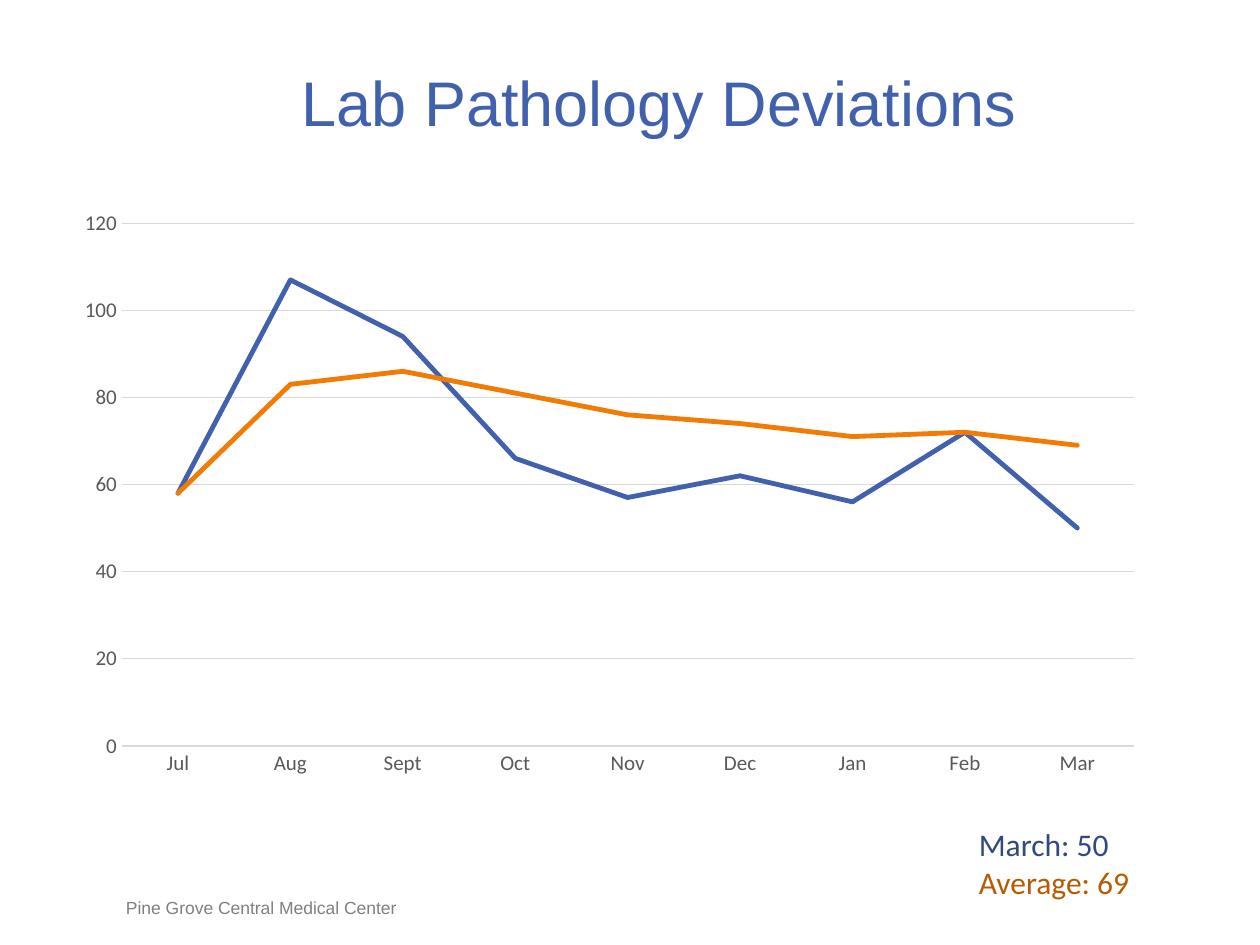
from pptx import Presentation
from pptx.chart.data import CategoryChartData
from pptx.dml.color import RGBColor
from pptx.enum.chart import XL_CHART_TYPE, XL_MARKER_STYLE, XL_TICK_MARK
from pptx.enum.text import MSO_ANCHOR, PP_ALIGN
from pptx.util import Inches, Pt

LINE_CHART = XL_CHART_TYPE.LINE
NO_MARKER = XL_MARKER_STYLE.NONE
NO_TICK = XL_TICK_MARK.NONE
TOP, BOTTOM = MSO_ANCHOR.TOP, MSO_ANCHOR.BOTTOM
LEFT, CENTER = PP_ALIGN.LEFT, PP_ALIGN.CENTER

THEME = {
    "heading_font": "Arial", "body_font": "Calibri",
    "title_size": 36, "summary_size": 18, "axis_size": 12,
    "chart_size": 10, "footer_size": 10,
    "blue": "4261AD", "orange": "F07B05",
    "dark_blue": "314982", "dark_orange": "B45C04",
    "footer": "808080", "axis_text": "595959", "grid": "D9D9D9",
    "chart_text": "000000",
    "series_width": 2.75, "axis_width": 1, "grid_width": 0.75,
}

TITLE = "Lab Pathology Deviations"
FOOTER = "Pine Grove Central Medical Center"
MONTHS = ["Jul", "Aug", "Sept", "Oct", "Nov", "Dec", "Jan", "Feb", "Mar"]
SERIES = [
    ("Series 1", [58, 107, 94, 66, 57, 62, 56, 72, 50], "blue"),
    ("Series 2", [58, 83, 86, 81, 76, 74, 71, 72, 69], "orange"),
]
SUMMARY = [("March: 50", "dark_blue"), ("Average: 69", "dark_orange")]


def style_font(font, family, size, color):
    font.name = THEME[family]
    font.size = Pt(THEME[size])
    font.color.rgb = RGBColor.from_string(THEME[color])


def style_line(line, color, width):
    line.color.rgb = RGBColor.from_string(THEME[color])
    line.width = Pt(THEME[width])


def add_text(page, area, lines, family, size, align=LEFT, anchor=TOP, inset=True):
    """Add a box with one paragraph per (text, colour) pair."""
    box = page.shapes.add_textbox(*map(Inches, area))
    frame = box.text_frame
    frame.word_wrap = True
    frame.vertical_anchor = anchor
    if not inset:
        frame.margin_left = frame.margin_right = 0
        frame.margin_top = frame.margin_bottom = 0
    for index, (text, color) in enumerate(lines):
        para = frame.add_paragraph() if index else frame.paragraphs[0]
        para.text = text
        para.alignment = align
        style_font(para.font, family, size, color)


def add_deviation_chart(page, area):
    data = CategoryChartData()
    data.categories = MONTHS
    for name, values, _ in SERIES:
        data.add_series(name, values)
    chart = page.shapes.add_chart(LINE_CHART, *map(Inches, area), data).chart
    chart.has_legend = False
    chart.has_title = False
    style_font(chart.font, "body_font", "chart_size", "chart_text")

    plot = chart.plots[0]
    plot.vary_by_categories = False
    for series, (_, _, color) in zip(plot.series, SERIES):
        series.smooth = False
        series.marker.style = NO_MARKER
        style_line(series.format.line, color, "series_width")
        series.format.line._get_or_add_ln().set("cap", "rnd")

    months, counts = chart.category_axis, chart.value_axis
    for axis in (months, counts):
        axis.major_tick_mark = axis.minor_tick_mark = NO_TICK
        style_font(axis.tick_labels.font, "body_font", "axis_size", "axis_text")
    style_line(months.format.line, "grid", "axis_width")
    counts.format.line.fill.background()
    counts.minimum_scale, counts.maximum_scale, counts.major_unit = 0, 120, 20
    counts.has_major_gridlines = True
    style_line(counts.major_gridlines.format.line, "grid", "grid_width")


def main():
    deck = Presentation()
    deck.slide_width, deck.slide_height = Inches(10), Inches(7.5)
    page = deck.slides.add_slide(deck.slide_layouts[6])
    add_text(page, (1, 7.12, 3.17, 0.17), [(FOOTER, "footer")],
             "heading_font", "footer_size", anchor=BOTTOM, inset=False)
    add_text(page, (0.98, 0.5, 8.5, 0.61), [(TITLE, "blue")],
             "heading_font", "title_size", align=CENTER, inset=False)
    add_text(page, (7.67, 6.5, 2, 0.71), SUMMARY, "body_font", "summary_size")
    add_deviation_chart(page, (0.5, 1.58, 8.67, 4.67))
    deck.save("out.pptx")


if __name__ == "__main__":
    main()
